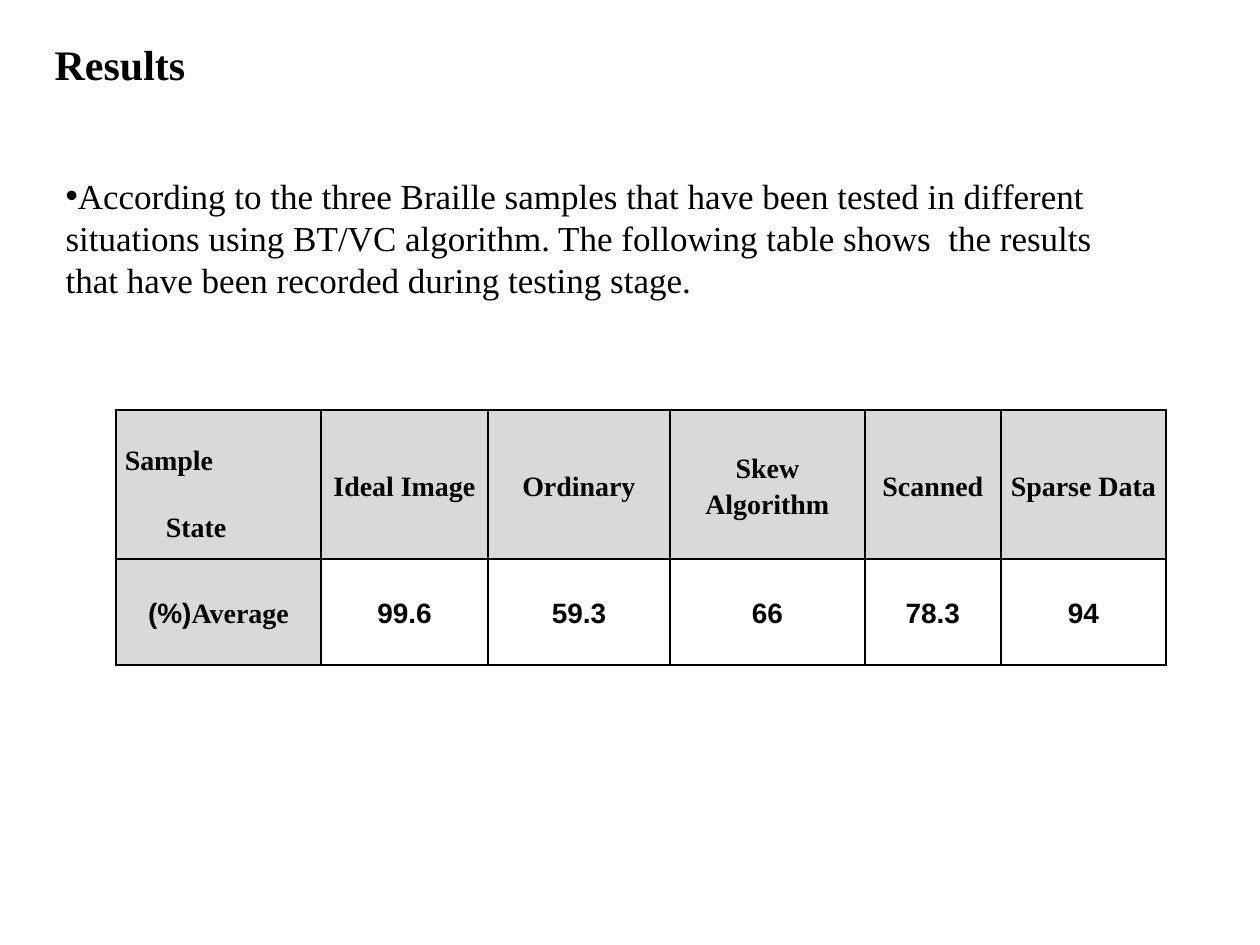
from lxml.etree import SubElement
from pptx import Presentation
from pptx.dml.color import RGBColor
from pptx.enum.text import MSO_ANCHOR, MSO_AUTO_SIZE, PP_ALIGN
from pptx.oxml.ns import qn
from pptx.util import Emu, Inches, Pt

PIXELS_PER_INCH = 126
SERIF = "Times New Roman"
COLUMN_WIDTHS = [205, 167, 182, 195, 136, 165]
ROW_HEIGHTS = [149, 106]
HEADINGS = ["Ideal Image", "Ordinary", "Skew Algorithm", "Scanned", "Sparse Data"]
AVERAGES = ["99.6", "59.3", "66", "78.3", "94"]
SUMMARY = (
    "According to the three Braille samples that have been tested in different "
    "situations using BT/VC algorithm. The following table shows  the results "
    "that have been recorded during testing stage."
)


def px(length):
    return Emu(round(length * 914400 / PIXELS_PER_INCH))


def color(value):
    return RGBColor.from_string(value)


def apply(target, **values):
    for name, value in values.items():
        setattr(target, name, value)


def write(paragraph, text, size, bold=False, name=SERIF, **layout):
    run = paragraph.add_run()
    run.text = text
    apply(run.font, size=Pt(size), bold=bold, name=name)
    run.font.color.rgb = color("000000")
    apply(paragraph, **layout)
    return run


def fill_placeholder(shape, box, text, size, bold=False):
    for name, length in zip(("left", "top", "width", "height"), box):
        setattr(shape, name, px(length))
    frame = shape.text_frame
    apply(frame, word_wrap=True, auto_size=MSO_AUTO_SIZE.NONE,
          vertical_anchor=MSO_ANCHOR.TOP)
    paragraph = frame.paragraphs[0]
    write(paragraph, text, size, bold, alignment=PP_ALIGN.LEFT, space_before=Pt(0))
    return paragraph


def add_bullet(paragraph):
    properties = paragraph._p.get_or_add_pPr()
    properties.set("marL", "0")
    properties.set("indent", "0")
    SubElement(properties, qn("a:buChar"), char="•")


def format_cell(cell, fill=None):
    apply(cell, margin_left=Inches(0.07), margin_right=Inches(0.07),
          margin_top=0, margin_bottom=0, vertical_anchor=MSO_ANCHOR.MIDDLE)
    properties = cell._tc.get_or_add_tcPr()
    for side in ("lnL", "lnR", "lnT", "lnB"):
        line = SubElement(properties, qn(f"a:{side}"), w=str(Pt(1)))
        solid = SubElement(line, qn("a:solidFill"))
        SubElement(solid, qn("a:srgbClr"), val="000000")
    if fill:
        cell.fill.solid()
        cell.fill.fore_color.rgb = color(fill)
    else:
        cell.fill.background()


def write_cell(cell, text, name=SERIF, right_to_left=False):
    paragraph = cell.text_frame.paragraphs[0]
    run = write(paragraph, text, 16, True, name,
                alignment=PP_ALIGN.CENTER, line_spacing=1.15)
    if right_to_left:
        paragraph._p.get_or_add_pPr().set("rtl", "1")
        SubElement(run._r.get_or_add_rPr(), qn("a:cs"), typeface="Arial")


def write_corner(cell):
    apply(cell, vertical_anchor=MSO_ANCHOR.TOP, margin_top=px(31))
    frame = cell.text_frame
    layout = {"alignment": PP_ALIGN.LEFT, "line_spacing": 1.15}
    write(frame.paragraphs[0], "Sample", 16, True, **layout)
    state = frame.add_paragraph()
    write(state, "State", 16, True, space_before=Pt(18), **layout)
    state._p.get_or_add_pPr().set("marL", str(px(41)))


def add_results_table(slide):
    table = slide.shapes.add_table(
        len(ROW_HEIGHTS), len(COLUMN_WIDTHS), px(116), px(410),
        px(sum(COLUMN_WIDTHS)), px(sum(ROW_HEIGHTS))).table
    apply(table, first_row=False, horz_banding=False)
    for column, width in zip(table.columns, COLUMN_WIDTHS):
        column.width = px(width)
    for row, height in zip(table.rows, ROW_HEIGHTS):
        row.height = px(height)
    for row in range(len(ROW_HEIGHTS)):
        for column in range(len(COLUMN_WIDTHS)):
            is_heading = row == 0 or column == 0
            format_cell(table.cell(row, column), "D9D9D9" if is_heading else None)
    write_corner(table.cell(0, 0))
    write_cell(table.cell(1, 0), "Average(%)", right_to_left=True)
    for column, (heading, average) in enumerate(zip(HEADINGS, AVERAGES), 1):
        write_cell(table.cell(0, column), heading)
        write_cell(table.cell(1, column), average, "Calibri", right_to_left=True)


def main():
    presentation = Presentation()
    apply(presentation, slide_width=px(1260), slide_height=px(945))
    slide = presentation.slides.add_slide(presentation.slide_layouts[1])
    title, body = slide.placeholders
    fill_placeholder(title, (42, 32, 368, 63), "Results", 24, bold=True)
    add_results_table(slide)
    add_bullet(fill_placeholder(body, (53, 168, 1061, 140), SUMMARY, 20))
    presentation.save("out.pptx")


if __name__ == "__main__":
    main()
